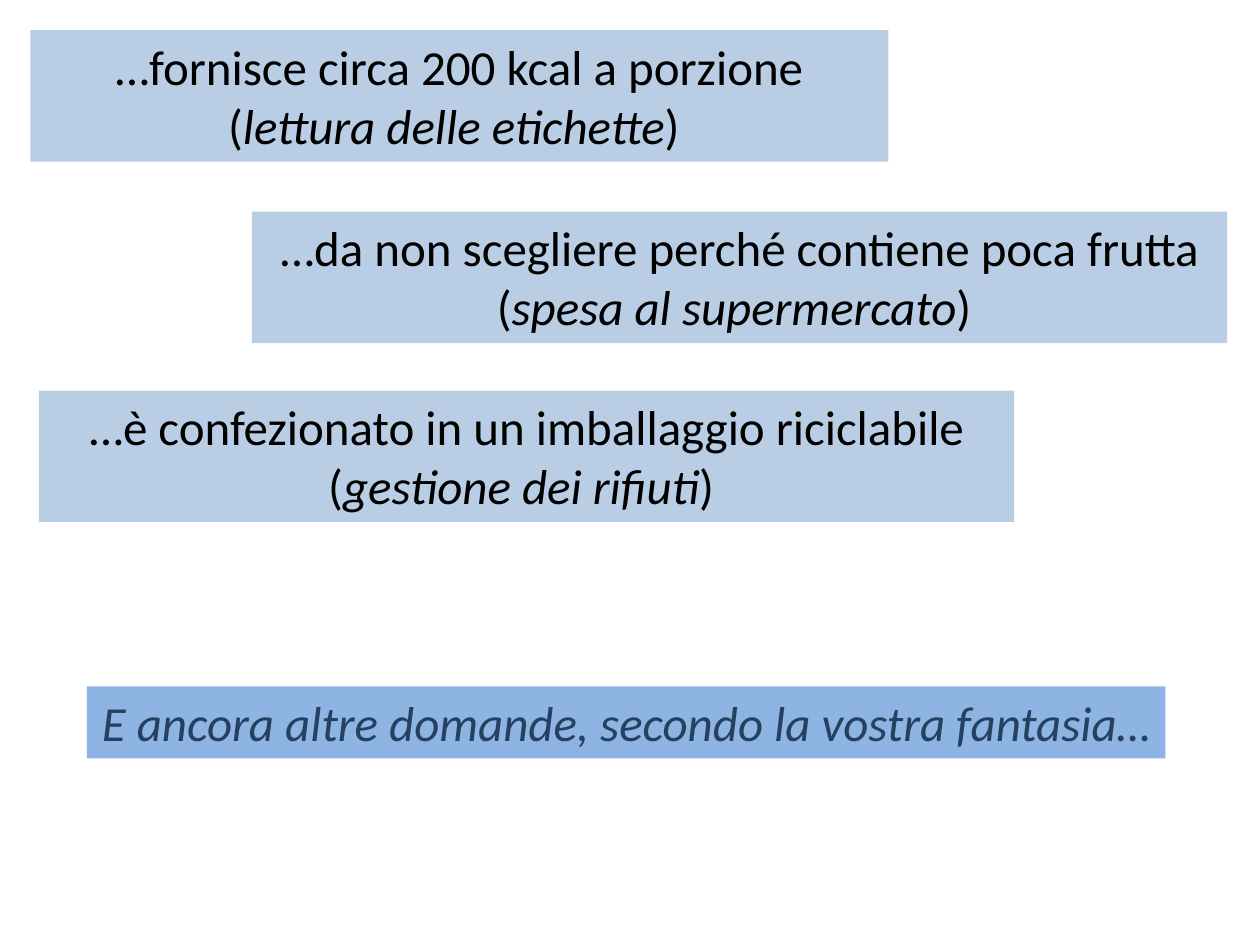
"""Build the slide of label-reading prompts and the closing invitation."""
from pptx import Presentation
from pptx.dml.color import RGBColor as RGB
from pptx.enum.text import MSO_AUTO_SIZE as Fit, PP_ALIGN as Align
from pptx.util import Pt


def paint(fill, tone):
    fill.solid()
    fill.fore_color.rgb = RGB.from_string(tone)


deck = Presentation()
deck.slide_width, deck.slide_height = Pt(720), Pt(540)
slide = deck.slides.add_slide(deck.slide_layouts[6])

PALE, BLUE, BLACK, NAVY = "B9CDE5", "8EB4E3", "000000", "254061"
hints = [
    (17.28, 17.28, 490.3, "…fornisce circa 200 kcal a porzione", "lettura delle etichette"),
    (144, 121, 557.3, "…da non scegliere perché contiene poca frutta", "spesa al supermercato"),
    (22.3, 223.2, 557.3, "…è confezionato in un imballaggio riciclabile", "gestione dei rifiuti"),
]
boxes = [
    (x, y, wide, 75.12, PALE, BLACK,
     [[(claim, False)], [("(", False), (topic, True), (") ", False)]])
    for x, y, wide, claim, topic in hints
]
close = "E ancora altre domande, secondo la vostra fantasia…"
boxes.append((49.68, 392.2, 616.3, 41.2, BLUE, NAVY, [[(close, True)]]))

for x, y, wide, high, back, ink, lines in boxes:
    box = slide.shapes.add_textbox(Pt(x), Pt(y), Pt(wide), Pt(high))
    paint(box.fill, back)
    frame = box.text_frame
    frame.word_wrap = True
    frame.auto_size = Fit.SHAPE_TO_FIT_TEXT
    for i, line in enumerate(lines):
        para = frame.add_paragraph() if i else frame.paragraphs[0]
        para.alignment = Align.CENTER
        for words, slant in line:
            run = para.add_run()
            run.text = words
            font = run.font
            font.name, font.size, font.italic = "Calibri", Pt(28), slant
            paint(font.fill, ink)

deck.save("out.pptx")
